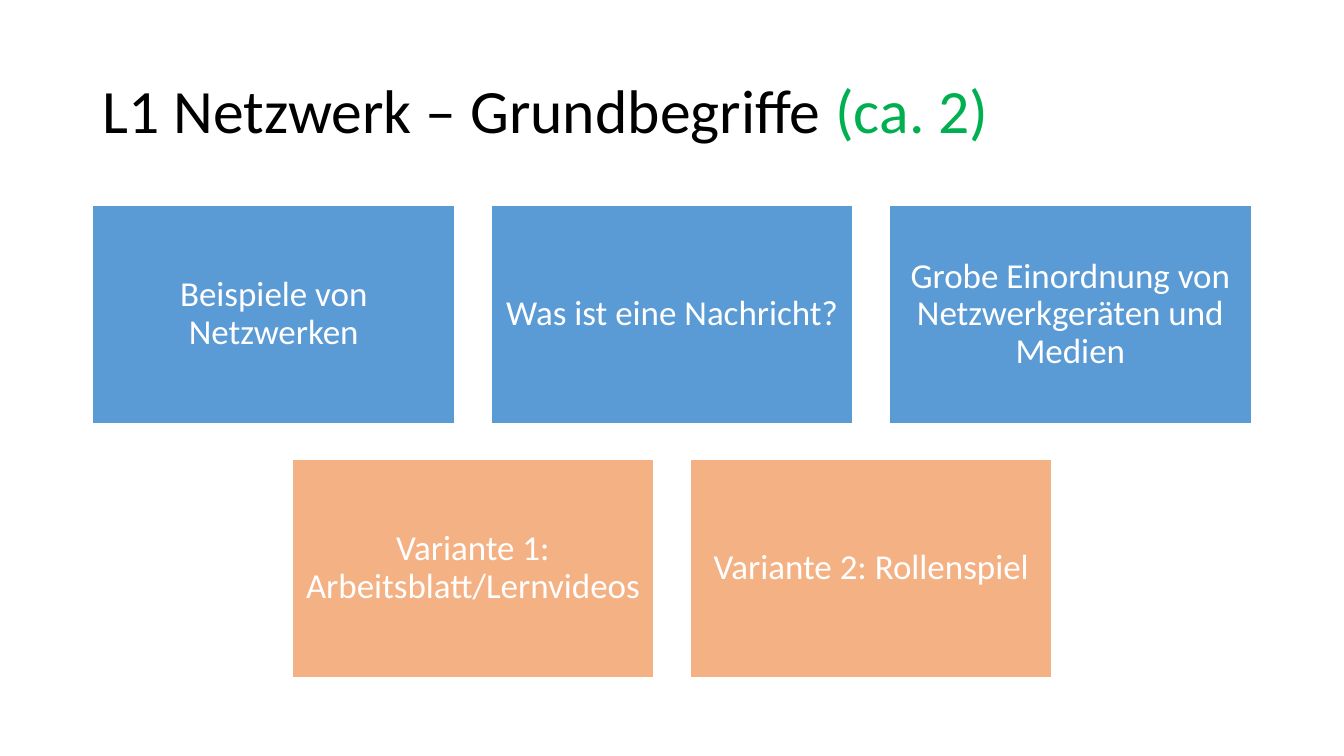
from dataclasses import dataclass

from pptx import Presentation
from pptx.dml.color import RGBColor
from pptx.enum.shapes import MSO_SHAPE
from pptx.enum.text import MSO_ANCHOR, MSO_AUTO_SIZE, PP_ALIGN
from pptx.util import Inches, Pt


@dataclass(frozen=True)
class Theme:
    font: str = "Calibri"
    title_size: int = 44
    card_size: int = 25
    line_width: int = 1
    line_spacing: float = 0.9
    black: str = "000000"
    white: str = "FFFFFF"
    green: str = "00B050"
    blue: str = "5B9BD5"
    orange: str = "F4B183"


THEME = Theme()

# Slide and card grid, in inches
SLIDE_WIDTH, SLIDE_HEIGHT = 13.33, 7.5
MARGIN = 0.92
TITLE_TOP, TITLE_HEIGHT = 0.4, 1.45
CARD_WIDTH, CARD_HEIGHT = 3.59, 2.16
GRID_TOP = 2.04
COLUMN_STEP, ROW_STEP = 3.95, 2.52
INSET = 0.1

TITLE_RUNS = [
    ("L1 Netzwerk – Grundbegriffe", THEME.black),
    (" (ca. 2)", THEME.green),
]
CARD_ROWS = [
    (THEME.blue, [
        "Beispiele von Netzwerken",
        "Was ist eine Nachricht?",
        "Grobe Einordnung von Netzwerkgeräten und Medien",
    ]),
    (THEME.orange, [
        "Variante 1: Arbeitsblatt/Lernvideos",
        "Variante 2: Rollenspiel",
    ]),
]


def apply_format(target, values):
    for name, value in values.items():
        setattr(target, name, value)


def write_text(text_frame, runs, size, alignment):
    """Fill a text frame with one paragraph of (text, colour) runs."""
    apply_format(text_frame, {
        "word_wrap": True,
        "auto_size": MSO_AUTO_SIZE.NONE,
        "vertical_anchor": MSO_ANCHOR.MIDDLE,
    })
    paragraph = text_frame.paragraphs[0]
    apply_format(paragraph, {
        "alignment": alignment,
        "line_spacing": THEME.line_spacing,
    })
    for text, colour in runs:
        run = paragraph.add_run()
        run.text = text
        apply_format(run.font, {"name": THEME.font, "size": Pt(size)})
        run.font.color.rgb = RGBColor.from_string(colour)


def set_title(slide):
    title = slide.shapes.title
    apply_format(title, {
        "left": Inches(MARGIN),
        "top": Inches(TITLE_TOP),
        "width": Inches(SLIDE_WIDTH - 2 * MARGIN),
        "height": Inches(TITLE_HEIGHT),
    })
    write_text(title.text_frame, TITLE_RUNS, THEME.title_size, PP_ALIGN.LEFT)


def add_card(slide, column, row, text, colour):
    card = slide.shapes.add_shape(
        MSO_SHAPE.RECTANGLE,
        Inches(MARGIN + column * COLUMN_STEP),
        Inches(GRID_TOP + row * ROW_STEP),
        Inches(CARD_WIDTH),
        Inches(CARD_HEIGHT),
    )
    card.shadow.inherit = False
    card.fill.solid()
    card.fill.fore_color.rgb = RGBColor.from_string(colour)
    card.line.color.rgb = RGBColor.from_string(THEME.white)
    card.line.width = Pt(THEME.line_width)
    sides = ("left", "top", "right", "bottom")
    apply_format(card.text_frame,
                 {f"margin_{side}": Inches(INSET) for side in sides})
    write_text(card.text_frame, [(text, THEME.white)],
               THEME.card_size, PP_ALIGN.CENTER)


def add_card_rows(slide):
    most_columns = max(len(texts) for _, texts in CARD_ROWS)
    for row, (colour, texts) in enumerate(CARD_ROWS):
        # Shorter rows are centred below the widest one
        first_column = (most_columns - len(texts)) / 2
        for index, text in enumerate(texts):
            add_card(slide, first_column + index, row, text, colour)


def main():
    presentation = Presentation()
    apply_format(presentation, {
        "slide_width": Inches(SLIDE_WIDTH),
        "slide_height": Inches(SLIDE_HEIGHT),
    })
    title_only = presentation.slide_layouts.get_by_name("Title Only")
    slide = presentation.slides.add_slide(title_only)
    set_title(slide)
    add_card_rows(slide)
    presentation.save("out.pptx")


if __name__ == "__main__":
    main()
